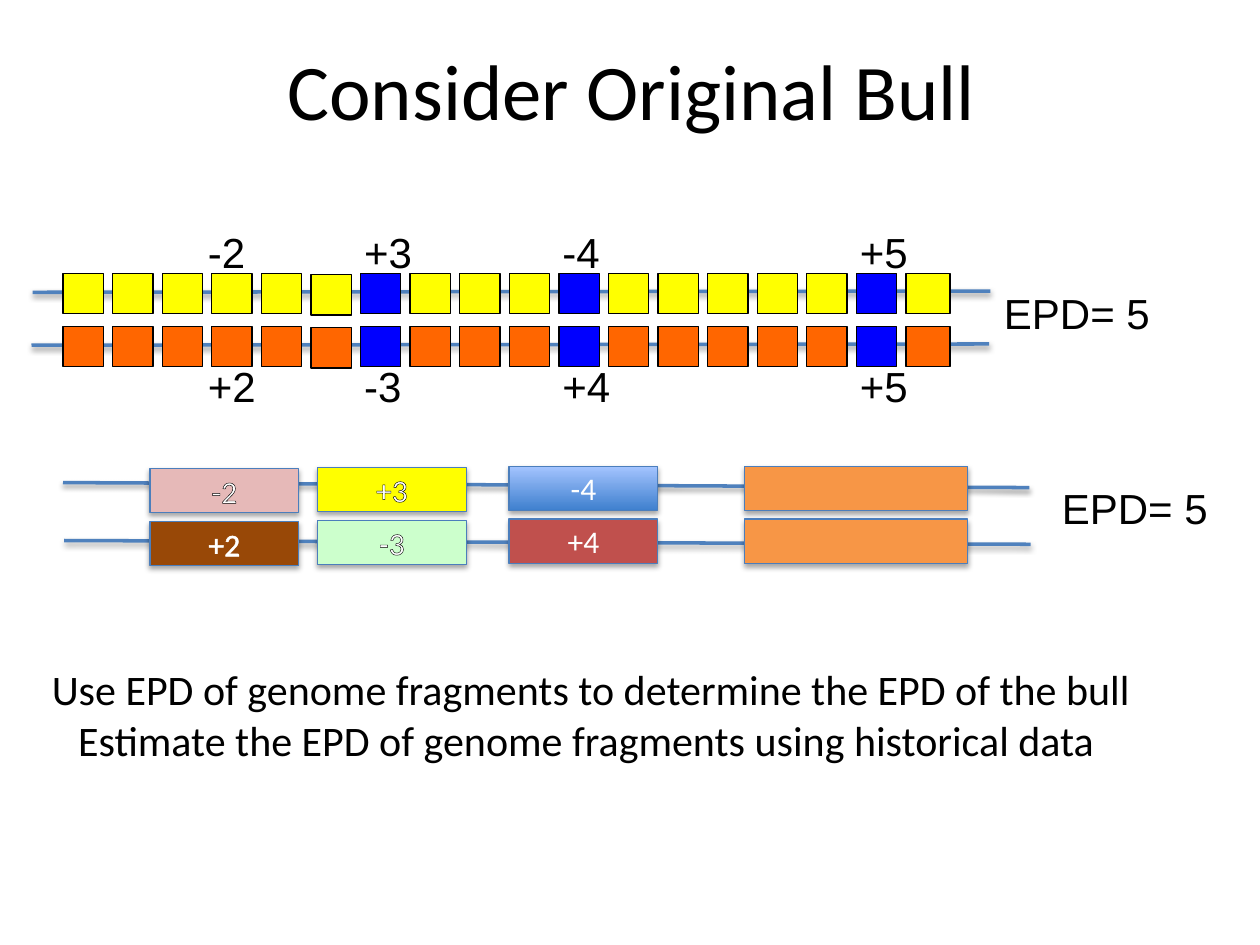
"""Build the slide on the EPD of a bull and its genome fragments."""
from lxml import etree
from pptx import Presentation
from pptx import util as u
from pptx.dml.color import RGBColor
from pptx.enum import shapes, text
from pptx.oxml import parse_xml
from pptx.oxml.ns import nsdecls, qn

WIDTH, HEIGHT = 10, 7.5
MARKER, MARKER_LEFT, MARKER_TOP = 0.32, 0.5, 2.17
MARKER_PITCH = (7.19 - MARKER_LEFT) / 17
STRAND_GAP = 0.42
GENE_COLUMNS = (6, 10, 16)
UNEVEN_COLUMN, LAST_COLUMN = 5, 17
MARKER_COLOURS = ("FFFF00", "FF6600")
GENE_COLOUR = "0000FF"

MARKER_EFFECTS = [
    (2.85, "-2", "+2"),
    (6, "+3", "-3"),
    (10, "-4", "+4"),
    (16, "+5", "+5"),
]
STRANDS = [
    (0.5, 3.83, 8.17, 3.87),
    (0.51, 4.29, 8.18, 4.32),
    (0.26, 2.32, 7.86, 2.31),
    (0.25, 2.74, 7.85, 2.73),
]
FRAGMENTS = [
    (1.19, 3.72, 1.18, ("-2", "E6B9B8", "000000"), ("+2", "984807", "FFFFFF")),
    (2.52, 3.71, 1.18, ("+3", "FFFF00", "000000"), ("-3", "CCFFCC", "000000")),
    (4.04, 3.7, 1.18, ("-4", ("3F80CE", "A4C4FF"), None), ("+4", "C0504D", None)),
    (5.91, 3.7, 1.77, ("", "F79646", None), ("", "F79646", None)),
]


def colour(value):
    """Turn a hex string into a colour."""
    return RGBColor.from_string(value)


def column_left(column):
    """Return the left edge of a marker column."""
    return MARKER_LEFT + column * MARKER_PITCH


def set_shadow(shape, opacity, distance):
    """Give a shape or connector a soft shadow below it."""
    shape._element.spPr.append(parse_xml(
        f'<a:effectLst {nsdecls("a")}><a:outerShdw blurRad="{u.Pt(3.1)}" '
        f'dist="{u.Pt(distance)}" dir="5400000" rotWithShape="0">'
        f'<a:srgbClr val="000000"><a:alpha val="{opacity * 1000}"/></a:srgbClr>'
        '</a:outerShdw></a:effectLst>'))


def outline_text(run, value):
    """Draw a thin line around the letters of a run."""
    outline = etree.Element(qn("a:ln"), w=str(u.Pt(0.75)))
    fill = etree.SubElement(outline, qn("a:solidFill"))
    etree.SubElement(fill, qn("a:srgbClr"), val=value)
    run._r.get_or_add_rPr().insert(0, outline)


def write(frame, lines, size, font, ink="000000", align=text.PP_ALIGN.LEFT):
    """Write one paragraph for each line."""
    for number, line in enumerate(lines):
        paragraph = frame.add_paragraph() if number else frame.paragraphs[0]
        paragraph.add_run().text = line
        paragraph.alignment = align
        paragraph.font.size = u.Pt(size)
        paragraph.font.name = font
        paragraph.font.color.rgb = colour(ink)


def add_label(slide, left, top, width, height, lines, size=24, font="Arial",
              align=text.PP_ALIGN.LEFT):
    """Add an unwrapped text box."""
    frame = slide.shapes.add_textbox(
        *map(u.Inches, (left, top, width, height))).text_frame
    frame.word_wrap = False
    frame.auto_size = text.MSO_AUTO_SIZE.SHAPE_TO_FIT_TEXT
    write(frame, lines, size, font, align=align)


def add_title(slide, title):
    """Add the slide title."""
    box = slide.shapes.add_textbox(
        *map(u.Inches, (0.51, 0.08, 0.9 * WIDTH, HEIGHT / 6)))
    box.text_frame.word_wrap = True
    box.text_frame.vertical_anchor = text.MSO_ANCHOR.MIDDLE
    write(box.text_frame, [title], 45, "Calibri", align=text.PP_ALIGN.CENTER)


def add_strand(slide, ends):
    """Add the line that joins the pieces of a chromosome."""
    strand = slide.shapes.add_connector(
        shapes.MSO_CONNECTOR.STRAIGHT, *map(u.Inches, ends))
    strand.line.color.rgb = colour("4F81BD")
    strand.line.width = u.Pt(2)
    set_shadow(strand, 38, 1.6)


def add_block(slide, left, top, width, height, fill, edge):
    """Add a rectangle with a plain or two-colour fill."""
    block = slide.shapes.add_shape(
        shapes.MSO_SHAPE.RECTANGLE, *map(u.Inches, (left, top, width, height)))
    if isinstance(fill, tuple):
        block.fill.gradient()
        block.fill.gradient_angle = 90
        for stop, value in zip(block.fill.gradient_stops, fill):
            stop.color.rgb = colour(value)
    else:
        block.fill.solid()
        block.fill.fore_color.rgb = colour(fill)
    block.line.color.rgb = colour(edge)
    block.line.width = u.Pt(0.75)
    return block


def add_markers(slide, row, base_colour):
    """Add one row of markers with the genes picked out."""
    for column in range(LAST_COLUMN + 1):
        drop = 0.01 if column == UNEVEN_COLUMN else 0
        width = 0.35 if column == LAST_COLUMN else MARKER
        fill = GENE_COLOUR if column in GENE_COLUMNS else base_colour
        marker = add_block(slide, column_left(column),
                           MARKER_TOP + row * STRAND_GAP + drop,
                           width, MARKER, fill, "000000")
        marker.shadow.inherit = False


def add_fragment(slide, left, top, width, effect, fill, outline):
    """Add a genome fragment with its effect."""
    fragment = add_block(slide, left, top, width, 0.35, fill, "4B7EBC")
    set_shadow(fragment, 35, 1.8)
    if effect:
        frame = fragment.text_frame
        frame.vertical_anchor = text.MSO_ANCHOR.MIDDLE
        write(frame, [effect], 18, "Calibri", "FFFFFF", text.PP_ALIGN.CENTER)
        if outline:
            outline_text(frame.paragraphs[0].runs[0], outline)


def main():
    """Build and save the slide."""
    deck = Presentation()
    deck.slide_width, deck.slide_height = u.Inches(WIDTH), u.Inches(HEIGHT)
    slide = deck.slides.add_slide(deck.slide_layouts[6])
    for ends in STRANDS:
        add_strand(slide, ends)
    add_title(slide, "Consider Original Bull")
    for row, base_colour in enumerate(MARKER_COLOURS):
        add_markers(slide, row, base_colour)
    for column, *effects in MARKER_EFFECTS:
        for top, effect in zip((1.75, 2.81), effects):
            width = 0.59 if effect.startswith("+") else 0.5
            add_label(slide, column_left(column) - 0.07, top, width, 0.5, [effect])
    for left, top, width, *alleles in FRAGMENTS:
        for row, allele in enumerate(alleles):
            add_fragment(slide, left, top + row * STRAND_GAP, width, *allele)
    for left, top in ((7.87, 2.23), (8.33, 3.78)):
        add_label(slide, left, top, 1.37, 0.5, ["EPD= 5"])
    add_label(slide, 0.26, 5.22, 8.86, 0.91, [
        "Use EPD of genome fragments to determine the EPD of the bull",
        "Estimate the EPD of genome fragments using historical data ",
    ], font="Calibri", align=text.PP_ALIGN.CENTER)
    deck.save("out.pptx")


if __name__ == "__main__":
    main()
